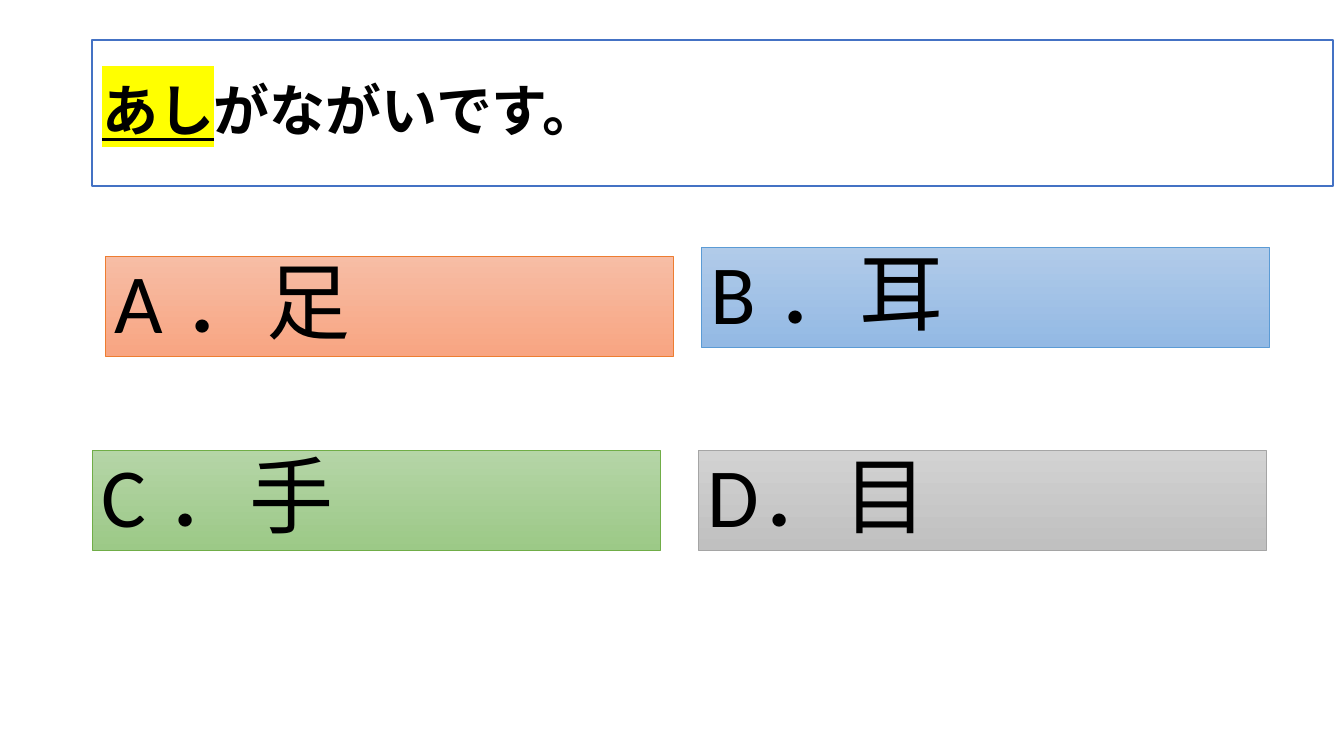
"""Build a Japanese vocabulary quiz slide with four answer boxes."""
from lxml import etree
from pptx import Presentation
from pptx.dml.color import RGBColor
from pptx.enum.lang import MSO_LANGUAGE_ID
from pptx.enum.shapes import MSO_SHAPE
from pptx.enum.text import MSO_ANCHOR, MSO_AUTO_SIZE, PP_ALIGN
from pptx.oxml.ns import qn
from pptx.util import Pt

PX = 914400 / 100.8
FONT = "Calibri"
BLACK = RGBColor(0x00, 0x00, 0x00)
WHITE = RGBColor(0xFF, 0xFF, 0xFF)
YELLOW = RGBColor(0xFF, 0xFF, 0x00)
TITLE_BLUE = RGBColor(0x44, 0x72, 0xC4)
ORANGE = RGBColor(0xED, 0x7D, 0x31)
ORANGE_TOP = RGBColor(0xF7, 0xBD, 0xA5)
ORANGE_BOTTOM = RGBColor(0xF8, 0xA5, 0x82)
BLUE = RGBColor(0x5B, 0x9B, 0xD5)
BLUE_TOP = RGBColor(0xB1, 0xCB, 0xE9)
BLUE_BOTTOM = RGBColor(0x93, 0xB9, 0xE4)
GREEN = RGBColor(0x70, 0xAD, 0x47)
GREEN_TOP = RGBColor(0xB5, 0xD5, 0xA7)
GREEN_BOTTOM = RGBColor(0x9C, 0xC9, 0x87)
GRAY = RGBColor(0xA5, 0xA5, 0xA5)
GRAY_TOP = RGBColor(0xD2, 0xD2, 0xD2)
GRAY_BOTTOM = RGBColor(0xC0, 0xC0, 0xC0)

ANSWER_W, ANSWER_H = 568, 100
ANSWERS = [
    ("A ．足", 105, 256, ORANGE, ORANGE_TOP, ORANGE_BOTTOM),
    ("B ．耳", 701, 247, BLUE, BLUE_TOP, BLUE_BOTTOM),
    ("C ．手", 92, 450, GREEN, GREEN_TOP, GREEN_BOTTOM),
    ("D．目", 698, 450, GRAY, GRAY_TOP, GRAY_BOTTOM),
]


def px(n):
    """Turn px into EMU."""
    return round(n * PX)


def add_text(p, text, size, bold=False, underline=False, highlight=None):
    """Add a formatted run to a paragraph."""
    r = p.add_run()
    r.text = text
    font = r.font
    font.size, font.bold, font.underline = Pt(size), bold, underline
    font.color.rgb = BLACK
    font.name = FONT
    font.language_id = MSO_LANGUAGE_ID.JAPANESE
    if highlight is not None:
        mark = etree.Element(qn("a:highlight"))
        etree.SubElement(mark, qn("a:srgbClr"), val=str(highlight))
        r._r.rPr.find(qn("a:latin")).addprevious(mark)


def format_paragraph(tf, anchor, space_before=0):
    """Set up a text frame and return its left-aligned first paragraph."""
    tf.word_wrap = True
    tf.auto_size = MSO_AUTO_SIZE.NONE
    tf.vertical_anchor = anchor
    p = tf.paragraphs[0]
    p.alignment = PP_ALIGN.LEFT
    p.line_spacing = 0.9
    p.space_before = Pt(space_before)
    return p


def add_question(s):
    """Place the title and fill in the question."""
    sp = s.shapes.title
    sp.left, sp.top, sp.width, sp.height = px(92), px(40), px(1241), px(146)
    sp.fill.solid()
    sp.fill.fore_color.rgb = WHITE
    sp.line.color.rgb = TITLE_BLUE
    sp.line.width = Pt(1)
    p = format_paragraph(sp.text_frame, MSO_ANCHOR.MIDDLE)
    add_text(p, "あし", 40, bold=True, underline=True, highlight=YELLOW)
    add_text(p, "がながいです。", 40, bold=True)


def add_answer(s, text, left, top, line, fill_top, fill_bottom):
    """Add an answer box with a vertical gradient."""
    sp = s.shapes.add_shape(MSO_SHAPE.RECTANGLE, px(left), px(top),
                            px(ANSWER_W), px(ANSWER_H))
    sp.shadow.inherit = False
    sp.fill.gradient()
    sp.fill.gradient_angle = 270
    for stop, color in zip(sp.fill.gradient_stops, (fill_top, fill_bottom)):
        stop.color.rgb = color
    for stop, position in zip(sp.fill.gradient_stops, (0, 1)):
        stop.position = position
    sp.line.color.rgb = line
    sp.line.width = Pt(0.5)
    p = format_paragraph(sp.text_frame, MSO_ANCHOR.TOP, space_before=10)
    add_text(p, text, 60)


def main():
    """Build and save the slide."""
    prs = Presentation()
    prs.slide_width, prs.slide_height = px(1344), px(756)
    s = prs.slides.add_slide(prs.slide_layouts[5])
    add_question(s)
    for answer in ANSWERS:
        add_answer(s, *answer)
    prs.save("out.pptx")


if __name__ == "__main__":
    main()
